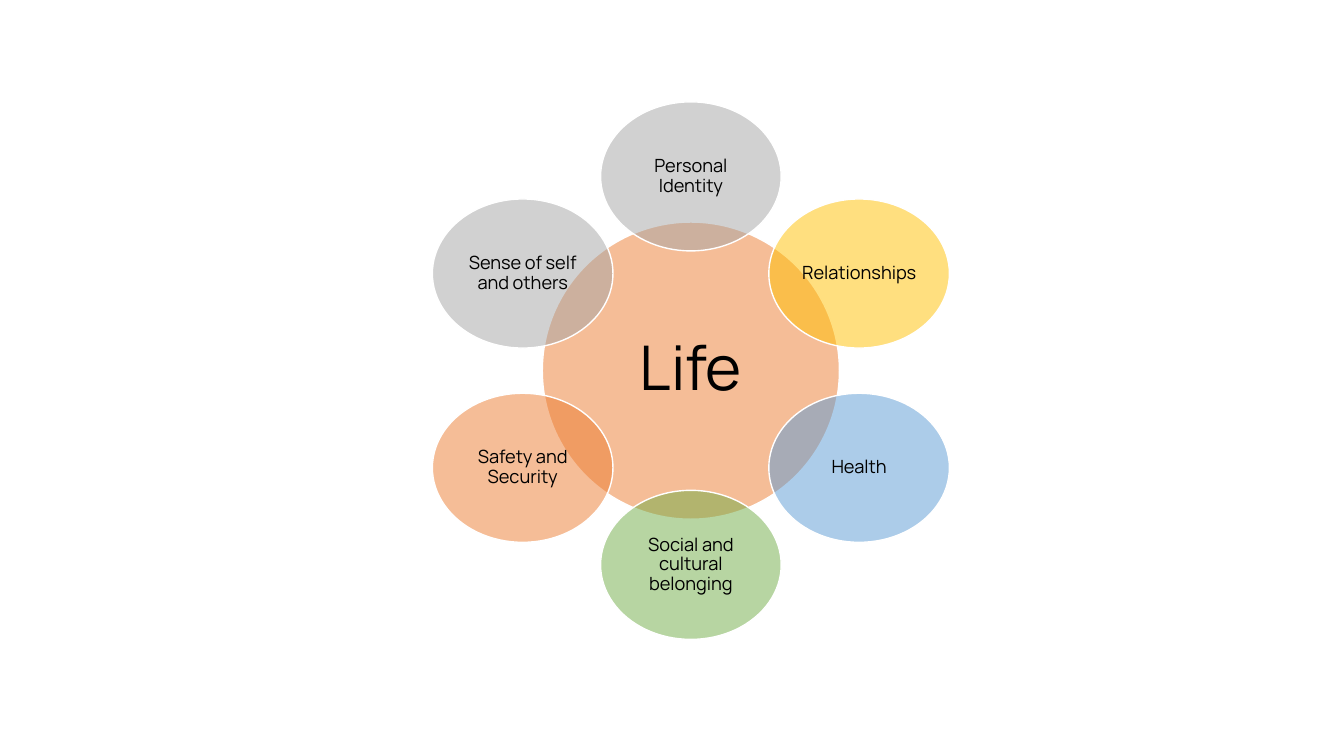
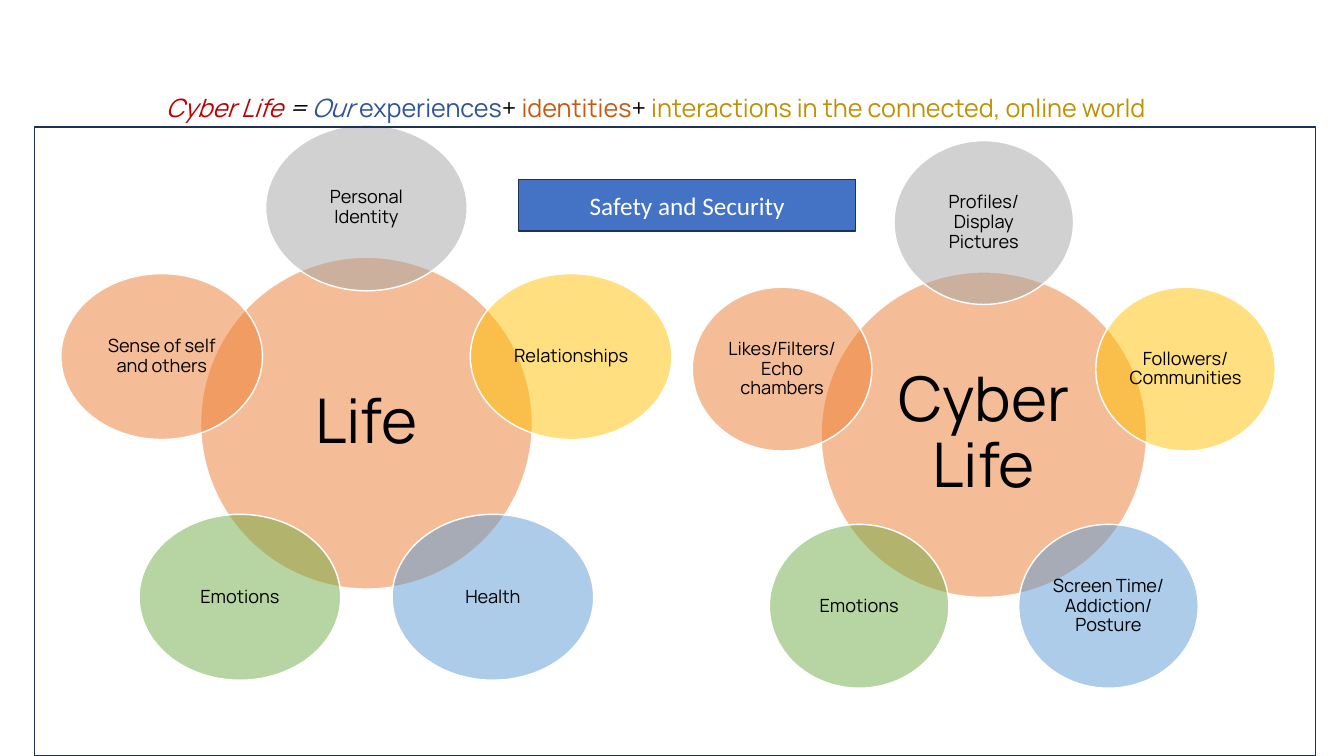
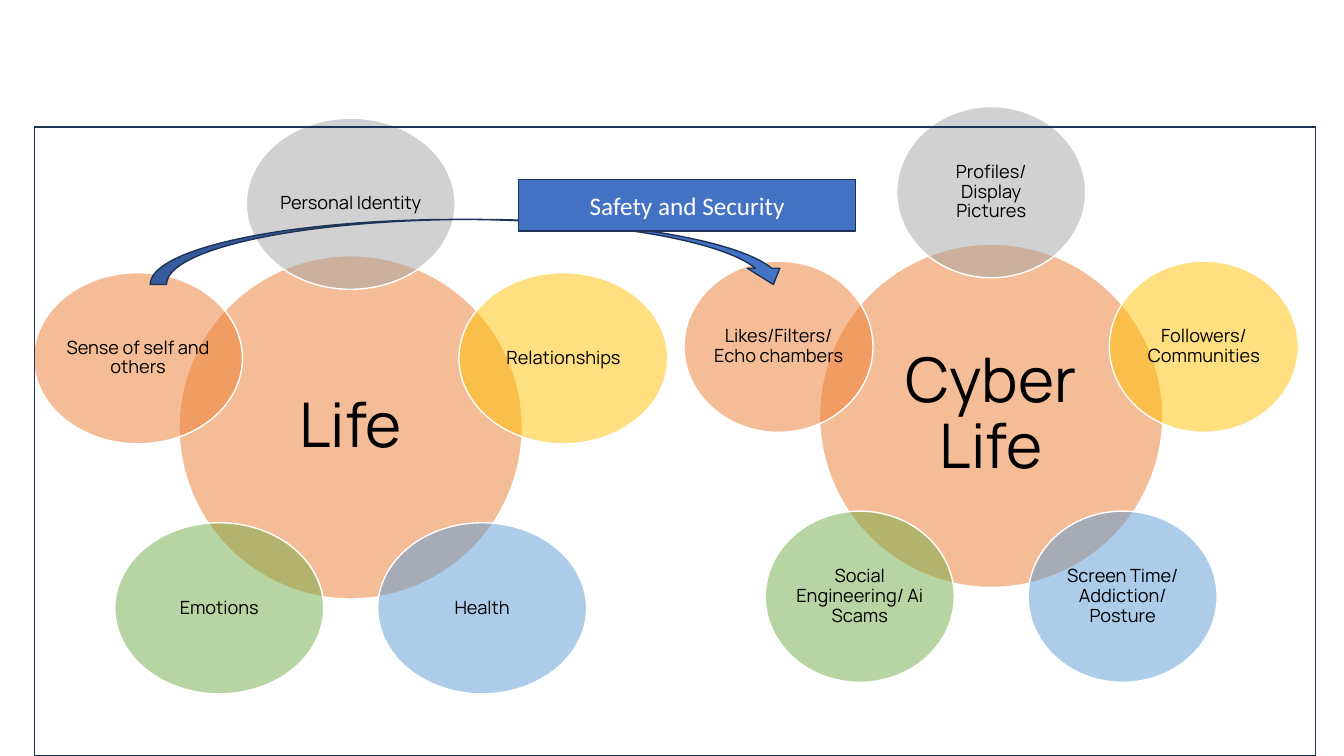
from math import cos, pi, sin

from pptx import Presentation
from pptx.dml.color import RGBColor
from pptx.enum.shapes import MSO_SHAPE as Shape
from pptx.enum.text import MSO_ANCHOR as Anchor, MSO_AUTO_SIZE as AutoSize, PP_ALIGN as Align
from pptx.oxml.ns import qn
from pptx.oxml.xmlchemy import OxmlElement
from pptx.util import Pt

PX = 9525
TITLE_ONLY, BLANK = 5, 6

ORANGE, GREY, GOLD, BLUE, GREEN = "ED7D31", "A5A5A5", "FFC000", "5B9BD5", "70AD47"
ACCENT, NAVY, WHITE, BLACK = "4472C4", "1E3256", "FFFFFF", "000000"
PETAL_FILLS = [GREY, GOLD, BLUE, GREEN, ORANGE, GREY]


def rgb(color):
    return RGBColor.from_string(color)


class Deck:
    """Holds the shared style and the slide being drawn."""

    display_font, label_font = "Manrope", "Calibri"
    hub_size, petal_size, body_size = 44, 13, 18

    def __init__(self):
        self.prs = Presentation()
        self.prs.slide_width, self.prs.slide_height = 1280 * PX, 720 * PX
        self.slide = None

    def new_slide(self, layout=BLANK):
        self.slide = self.prs.slides.add_slide(self.prs.slide_layouts[layout])

    def add_run(self, paragraph, text, size, color, font, italic=False):
        run = paragraph.add_run()
        run.text = text
        run.font.size, run.font.name, run.font.italic = Pt(size), font, italic
        run.font.color.rgb = rgb(color)

    def title(self, runs):
        """Write a one-line title from (text, colour, italic) runs."""
        title = self.slide.shapes.title
        title.left, title.top, title.width, title.height = (
            v * PX for v in (102, 83, 1045, 38))
        frame = title.text_frame
        frame.word_wrap, frame.auto_size = True, AutoSize.NONE
        frame.vertical_anchor = Anchor.MIDDLE
        paragraph = frame.paragraphs[0]
        paragraph.alignment = Align.CENTER
        for text, color, italic in runs:
            self.add_run(paragraph, text, self.body_size, color, self.display_font, italic)

    def shape(self, kind, left, top, width, height, fill=None, line=NAVY, alpha=None):
        """Add a preset shape; alpha is the opacity in percent."""
        shape = self.slide.shapes.add_shape(
            kind, *(round(v * PX) for v in (left, top, width, height)))
        shape.shadow.inherit = False
        if fill:
            shape.fill.solid()
            shape.fill.fore_color.rgb = rgb(fill)
        else:
            shape.fill.background()
        if alpha:
            opacity = OxmlElement("a:alpha")
            opacity.set("val", str(alpha * 1000))
            next(shape.element.iter(qn("a:srgbClr"))).append(opacity)
        shape.line.color.rgb = rgb(line)
        shape.line.width = Pt(1)
        return shape

    def circle(self, center, size, fill, label, font_size, inset):
        """Draw a translucent ellipse around center, with its label inside."""
        (x, y), (width, height) = center, size
        ellipse = self.shape(Shape.OVAL, x - width / 2, y - height / 2,
                             width, height, fill, WHITE, alpha=50)
        frame = ellipse.text_frame
        frame.word_wrap, frame.vertical_anchor = True, Anchor.MIDDLE
        frame.margin_left = frame.margin_right = inset * PX
        frame.margin_top = frame.margin_bottom = inset * PX
        paragraph = frame.paragraphs[0]
        paragraph.alignment, paragraph.line_spacing = Align.CENTER, 0.9
        for index, text in enumerate(label.split("\n")):
            if index:
                paragraph.add_line_break()
            self.add_run(paragraph, text, font_size, BLACK, self.display_font)

    def flower(self, hub, center, diameter, petal, radius, labels):
        """Draw a hub with petals evenly spaced clockwise from the top."""
        self.circle(center, (diameter, diameter), ORANGE, hub, self.hub_size, 6)
        for index, (label, fill) in enumerate(zip(labels, PETAL_FILLS)):
            angle = 2 * pi * index / len(labels)
            spot = (center[0] + radius * sin(angle), center[1] - radius * cos(angle))
            self.circle(spot, petal, fill, label, self.petal_size, 2)

    def arrow(self):
        self.shape(Shape.CURVED_DOWN_ARROW, 143, 209, 609, 62, ACCENT)

    def safety_frame(self):
        self.shape(Shape.FLOWCHART_PROCESS, 33, 121, 1220, 599)
        banner = self.shape(Shape.FLOWCHART_PROCESS, 494, 171, 321, 49, ACCENT)
        banner.text_frame.vertical_anchor = Anchor.MIDDLE
        paragraph = banner.text_frame.paragraphs[0]
        paragraph.alignment = Align.CENTER
        self.add_run(paragraph, "Safety and Security", self.body_size, WHITE, self.label_font)


def main():
    life = ["Personal Identity", "Relationships", "Health", "Emotions",
            "Sense of self and others"]

    def cyber_life(fourth):
        return ["Profiles/\nDisplay Pictures", "Followers/\nCommunities",
                "Screen Time/\nAddiction/ Posture", fourth, "Likes/Filters/\nEcho chambers"]

    deck = Deck()

    deck.new_slide()
    deck.flower("Life", (658, 353), 283, (172, 142), 185,
                life[:3] + ["Social and cultural belonging", "Safety and Security", life[-1]])

    deck.new_slide(TITLE_ONLY)
    deck.title([
        ("Cyber Life ", "C00000", True),
        ("= ", BLACK, True),
        ("Our", "2F5597", True),
        (" experiences", "2F5597", False),
        ("+ ", BLACK, False),
        ("identities", "C55A11", False),
        ("+ ", BLACK, False),
        ("interactions in the connected, online world", "BF9000", False),
    ])
    deck.flower("Cyber Life", (937, 414), 310, (171, 156), 202, cyber_life("Emotions"))
    deck.flower("Life", (349, 403), 316, (192, 158), 205, life)
    deck.safety_frame()

    deck.new_slide()
    deck.flower("Cyber Life", (944, 396), 327, (180, 163), 213,
                cyber_life("Social Engineering/ Ai Scams"))
    deck.flower("Life", (334, 407), 327, (199, 163), 213, life)
    deck.arrow()
    deck.safety_frame()

    deck.prs.save("out.pptx")


if __name__ == "__main__":
    main()
